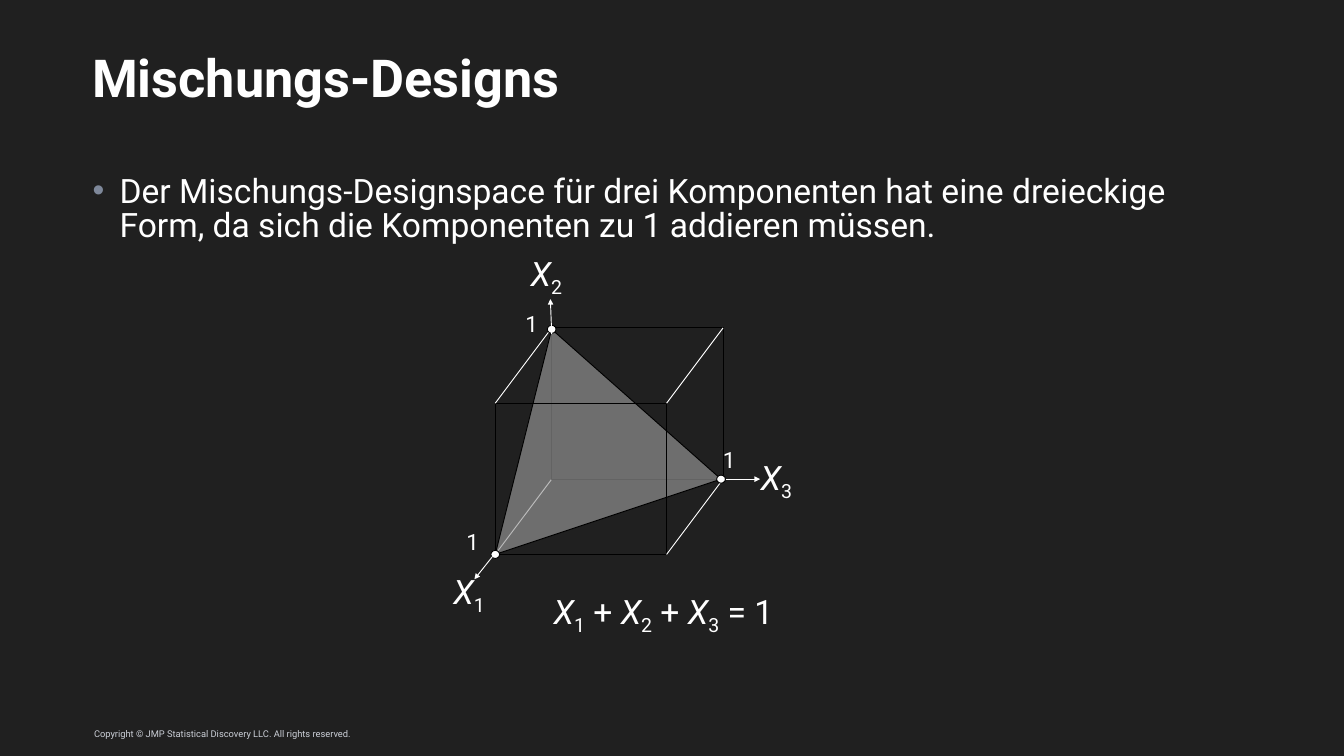
from lxml import etree
from pptx import Presentation
from pptx.dml.color import RGBColor
from pptx.enum import shapes, text
from pptx.oxml.ns import qn
from pptx.util import Inches, Pt

COLORS = {
    "background": "202020", "text": "FFFFFF", "edge": "000000",
    "plane": "999999", "bullet": "7E889A", "footer": "CBCFD7",
}
FONT = "Roboto"
TITLE = "Mischungs-Designs"
BODY = ("Der Mischungs-Designspace für drei Komponenten hat eine dreieckige Form, "
        "da sich die Komponenten zu 1 addieren müssen.")
COPYRIGHT = "Copyright © JMP Statistical Discovery LLC. All rights reserved."

CUBE_WIDTH, CUBE_HEIGHT = 2.55, 2.25
BACK_LEFT, BACK_TOP = 8.21, 4.88
DEPTH_X, DEPTH_Y = -0.84, 1.12
DOT_WIDTH, DOT_HEIGHT = 0.13, 0.12

VERTICES = [(7.37, 8.25), (8.21, 4.9), (10.73, 7.13)]
ARROWS = [((10.8, 7.13), (11.31, 7.13)), ((7.33, 8.28), (7.06, 8.62)), ((8.21, 4.97), (8.19, 4.45))]
AXIS_LABELS = [("1", 6.65, 8.44), ("2", 7.8, 3.71), ("3", 11.22, 6.75)]
UNIT_LABELS = [(6.84, 7.81), (10.66, 6.59), (7.72, 4.57)]
EQUATION = ["X", "1", " + ", "X", "2", " + ", "X", "3", " = 1"]


def rgb(name):
    return RGBColor.from_string(COLORS[name])


def add_span(para, words, size, color="text", bold=False, italic=False, subscript=False):
    span = para.add_run()
    span.text = words
    font = span.font
    font.name, font.size, font.bold, font.italic = FONT, Pt(size), bold, italic
    font.color.rgb = rgb(color)
    if subscript:
        span._r.get_or_add_rPr().set("baseline", "-25000")


def add_label(parts, left, top, width, height, size):
    box = diagram.add_textbox(Inches(left), Inches(top), Inches(width), Inches(height))
    frame = box.text_frame
    frame.word_wrap = False
    frame.auto_size = text.MSO_AUTO_SIZE.SHAPE_TO_FIT_TEXT
    previous = ""
    for part in parts:
        add_span(frame.paragraphs[0], part, size, italic=part == "X", subscript=previous == "X")
        previous = part


def style_shape(shape, fill=None):
    shape.shadow.inherit = False
    shape.line.color.rgb = rgb("edge")
    shape.line.width = Pt(1)
    if fill:
        shape.fill.solid()
        shape.fill.fore_color.rgb = rgb(fill)
    else:
        shape.fill.background()


def add_preset(kind, left, top, width, height, fill=None):
    shape = diagram.add_shape(kind, Inches(left), Inches(top), Inches(width), Inches(height))
    style_shape(shape, fill)


def add_line(start, end, arrow=False):
    line = diagram.add_connector(shapes.MSO_CONNECTOR.STRAIGHT, *map(Inches, start + end))
    line.line.color.rgb = rgb("text")
    line.line.width = Pt(1)
    if arrow:
        etree.SubElement(line.line._get_or_add_ln(), qn("a:tailEnd"), type="triangle")
    etree.SubElement(line._element.spPr, qn("a:effectLst"))


def add_depth_edge(column, row):
    x = BACK_LEFT + column * CUBE_WIDTH
    y = BACK_TOP + row * CUBE_HEIGHT
    add_line((x + DEPTH_X, y + DEPTH_Y), (x, y))


def add_face(left, top):
    add_preset(shapes.MSO_SHAPE.RECTANGLE, left, top, CUBE_WIDTH, CUBE_HEIGHT)


def prepare_placeholder(box, left, top, width, height, anchor, spacing):
    box.left, box.top, box.width, box.height = map(Inches, (left, top, width, height))
    frame = box.text_frame
    frame.margin_left = frame.margin_right = frame.margin_top = frame.margin_bottom = 0
    frame.word_wrap = True
    frame.auto_size = text.MSO_AUTO_SIZE.NONE
    frame.vertical_anchor = anchor
    para = frame.paragraphs[0]
    para.alignment = text.PP_ALIGN.LEFT
    para.line_spacing = spacing
    para.space_before = Pt(0)
    return para


deck = Presentation()
deck.slide_width, deck.slide_height = Inches(20), Inches(11.25)
page = deck.slides.add_slide(deck.slide_layouts[1])
page.background.fill.solid()
page.background.fill.fore_color.rgb = rgb("background")

footer = page.shapes.add_textbox(Inches(1.37), Inches(10.78), Inches(5.5), Inches(0.27))
footer.text_frame.word_wrap = True
footer.text_frame.margin_left = Inches(0.03)
footer.text_frame.vertical_anchor = text.MSO_ANCHOR.BOTTOM
add_span(footer.text_frame.paragraphs[0], COPYRIGHT, 10, "footer")

title = prepare_placeholder(page.shapes.title, 1.37, 0.78, 17.25, 0.85, text.MSO_ANCHOR.MIDDLE, 0.9)
add_span(title, TITLE, 56, bold=True)

body = prepare_placeholder(page.placeholders[1], 1.38, 2.62, 17.25, 7.51, text.MSO_ANCHOR.TOP, 0.85)
properties = body._p.get_or_add_pPr()
properties.set("marL", str(Inches(0.4)))
properties.set("indent", str(Inches(-0.4)))
bullet_color = etree.SubElement(properties, qn("a:buClr"))
etree.SubElement(bullet_color, qn("a:srgbClr"), val=COLORS["bullet"])
etree.SubElement(properties, qn("a:buChar"), char="•")
add_span(body, BODY, 36)

diagram = page.shapes.add_group_shape().shapes
add_depth_edge(0, 1)
add_face(BACK_LEFT, BACK_TOP)

corners = [(Inches(x), Inches(y)) for x, y in VERTICES]
builder = diagram.build_freeform(*corners[0])
builder.add_line_segments(corners[1:], close=True)
plane = builder.convert_to_shape()
style_shape(plane, "plane")
plane_color = plane._element.spPr.find(qn("a:solidFill")).find(qn("a:srgbClr"))
etree.SubElement(plane_color, qn("a:alpha"), val="65000")

add_face(BACK_LEFT + DEPTH_X, BACK_TOP + DEPTH_Y)
for column, row in [(0, 0), (1, 0), (1, 1)]:
    add_depth_edge(column, row)
for x, y in VERTICES:
    add_preset(shapes.MSO_SHAPE.OVAL, x - DOT_WIDTH / 2, y - DOT_HEIGHT / 2, DOT_WIDTH, DOT_HEIGHT, "text")
for start, end in ARROWS:
    add_line(start, end, arrow=True)

for index, left, top in AXIS_LABELS:
    add_label(["X", index], left, top, 0.93, 0.81, 36)
for left, top in UNIT_LABELS:
    add_label(["1"], left, top, 0.59, 0.61, 24)
add_label(EQUATION, 8.14, 8.74, 3.98, 0.81, 36)

deck.save("out.pptx")
